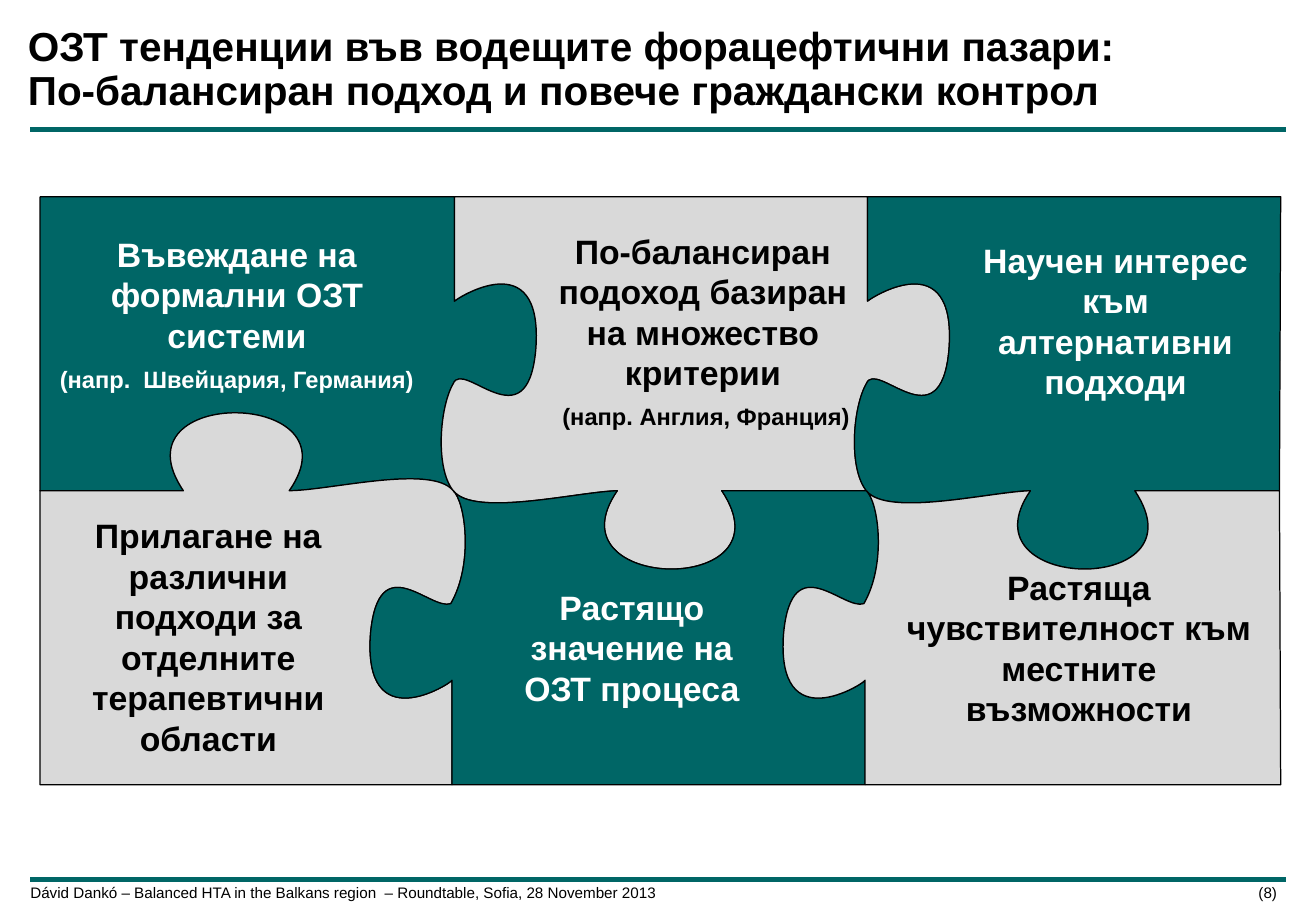
import pptx
import pptx.util
import pptx.dml.color
import pptx.enum.shapes
import pptx.enum.text
from lxml import etree

Inches, Pt = pptx.util.Inches, pptx.util.Pt
ANCHOR, ALIGN = pptx.enum.text.MSO_ANCHOR, pptx.enum.text.PP_ALIGN
TEAL, GREY, BLACK, WHITE = "006666", "D9D9D9", "000000", "FFFFFF"
A = "http://schemas.openxmlformats.org/drawingml/2006/main"


def rgb(code):
    return pptx.dml.color.RGBColor.from_string(code)


def shift(edge):
    """The same edge one puzzle column to the right."""
    return [[(x + STEP, y) for x, y in seg] for seg in edge]


prs = pptx.Presentation()
prs.slide_width, prs.slide_height = Inches(10.83), Inches(7.5)
slide = prs.slides.add_slide(prs.slide_layouts[6])
shapes = slide.shapes

# Rules above and below the content
for y in (1.07, 7.24):
    rule = shapes.add_connector(pptx.enum.shapes.MSO_CONNECTOR.STRAIGHT,
                                Inches(10.58), Inches(y), Inches(0.25), Inches(y))
    rule.line.color.rgb = rgb(TEAL)
    rule.line.width = Pt(3)
    etree.SubElement(rule._element.spPr, f"{{{A}}}effectLst")

# Puzzle edges as segments: two points make a line, four a Bezier curve
LEFT, RIGHT, TOP, MID, LOW, STEP = 0.33, 10.54, 1.62, 4.04, 6.46, 3.4
up = [[(3.73, MID), (3.58, 3.85), (3.62, 3.35), (3.73, 3.16)],
      [(3.73, 3.16), (3.81, 2.95), (4.34, 3.66), (4.41, 2.88)],
      [(4.41, 2.88), (4.48, 1.98), (3.74, 2.47), (3.74, 2.48)],
      [(3.74, 2.48), (3.74, TOP)]]
down = [[(3.73, MID), (3.83, 4.13), (3.9, 4.64), (3.71, 4.97)],
        [(3.71, 4.97), (3.54, 5.03), (3.12, 4.5), (3.05, 5.21)],
        [(3.05, 5.21), (2.98, 6.1), (3.72, 5.62), (3.72, 5.6)],
        [(3.72, 5.6), (3.72, LOW)]]
first = [[(LEFT, MID), (1.51, MID)],
         [(1.51, MID), (0.92, 3.17), (2.97, 3.2), (2.38, MID)],
         [(2.38, MID), (2.71, 4.04), (3.55, 3.82), (3.73, MID)]]
seam = [[(3.73, MID), (3.9, 4.26), (4.75, 4.05), (5.08, MID)],
        [(5.08, MID), (4.5, 4.88), (6.53, 4.92), (5.94, MID)],
        [(5.94, MID), (7.13, MID)]]
seams = [first, seam, shift(seam)]

for row, (edge, end) in enumerate([(up, TOP), (down, LOW)]):
    sides = [[[(LEFT, MID), (LEFT, end)]], edge, shift(edge),
             [[(RIGHT, MID), (RIGHT, end)]]]
    for col in range(3):
        back = [seg[::-1] for seg in sides[col][::-1]]
        there = seams[col] + sides[col + 1]
        segs = there + [[there[-1][-1], back[0][0]]] + back
        pts = [(Inches(x), Inches(y)) for seg in segs for x, y in seg[1:]]
        form = shapes.build_freeform(*map(Inches, segs[0][0]))
        form.add_line_segments(pts, close=True)
        piece = form.convert_to_shape()
        # Join the three steps of each curve into one Bezier element
        steps = iter(list(piece._element.iter(f"{{{A}}}lnTo")))
        for seg in segs:
            step = next(steps)
            if len(seg) == 4:
                step.tag = f"{{{A}}}cubicBezTo"
                for _ in range(2):
                    extra = next(steps)
                    step.append(extra[0])
                    extra.getparent().remove(extra)
        piece.shadow.inherit = False
        piece.fill.solid()
        piece.fill.fore_color.rgb = rgb(GREY if (row + col) % 2 else TEAL)
        piece.line.color.rgb = rgb(BLACK)
        piece.line.width = Pt(0.75)

# Each text: box, anchor, alignment, line spacing, colour, bold, (words, size) per paragraph
mid = (ANCHOR.MIDDLE, ALIGN.CENTER, 1.0)
texts = [
    ((0.23, 0.52, 9.28, 0.46), ANCHOR.BOTTOM, ALIGN.LEFT, 0.9, BLACK, True,
     [("ОЗТ тенденции във водещите форацефтични пазари:", 24),
      ("По-балансиран подход и повече граждански контрол", 24)]),
    ((0.25, 7.29, 10.36, 0.14), ANCHOR.TOP, ALIGN.LEFT, 0.9, BLACK, False,
     [("Dávid Dankó – Balanced HTA in the Balkans region  – Roundtable, "
       "Sofia, 28 November 2013\t(8)", 9)]),
    ((0.45, 2.43, 3, 0.3), *mid, WHITE, True,
     [("Въвеждане на формални ОЗТ системи", 20), ("(напр.  Швейцария, Германия)", 14)]),
    ((4.47, 2.57, 2.63, 0.3), *mid, BLACK, True,
     [("По-балансиран подоход базиран на множество критерии", 20),
      (" (напр. Англия, Франция)", 14)]),
    ((7.94, 2.48, 2.48, 0.32), *mid, WHITE, True,
     [("Научен интерес към алтернативни подходи", 20)]),
    ((0.53, 5.09, 2.37, 0.3), *mid, BLACK, True,
     [("Прилагане на различни подходи за отделните терапевтични области", 20)]),
    ((4.16, 5.18, 2.08, 0.3), *mid, WHITE, True,
     [("Растящо значение на ОЗТ процеса", 20)]),
    ((7.38, 5.18, 3, 0.3), *mid, BLACK, True,
     [("Растяща чувствителност към местните възможности", 20)]),
]
for box, anchor, align, space, color, bold, paras in texts:
    frame = shapes.add_textbox(*map(Inches, box)).text_frame
    frame.word_wrap = True
    frame.vertical_anchor = anchor
    frame.margin_left = frame.margin_right = 0
    frame.margin_top = frame.margin_bottom = Inches(0.04 if anchor == ANCHOR.BOTTOM else 0)
    for i, (words, size) in enumerate(paras):
        para = frame.add_paragraph() if i else frame.paragraphs[0]
        para.alignment = align
        para.line_spacing = space
        if i and align == ALIGN.CENTER:
            para.space_before = Pt(5.6)
        if "\t" in words:
            tabs = etree.SubElement(para._p.get_or_add_pPr(), f"{{{A}}}tabLst")
            etree.SubElement(tabs, f"{{{A}}}tab", pos=str(Inches(10.26)), algn="r")
        run = para.add_run()
        run.text = words
        run.font.name = "Arial"
        run.font.size = Pt(size)
        run.font.bold = bold
        run.font.color.rgb = rgb(color)

prs.save("out.pptx")
